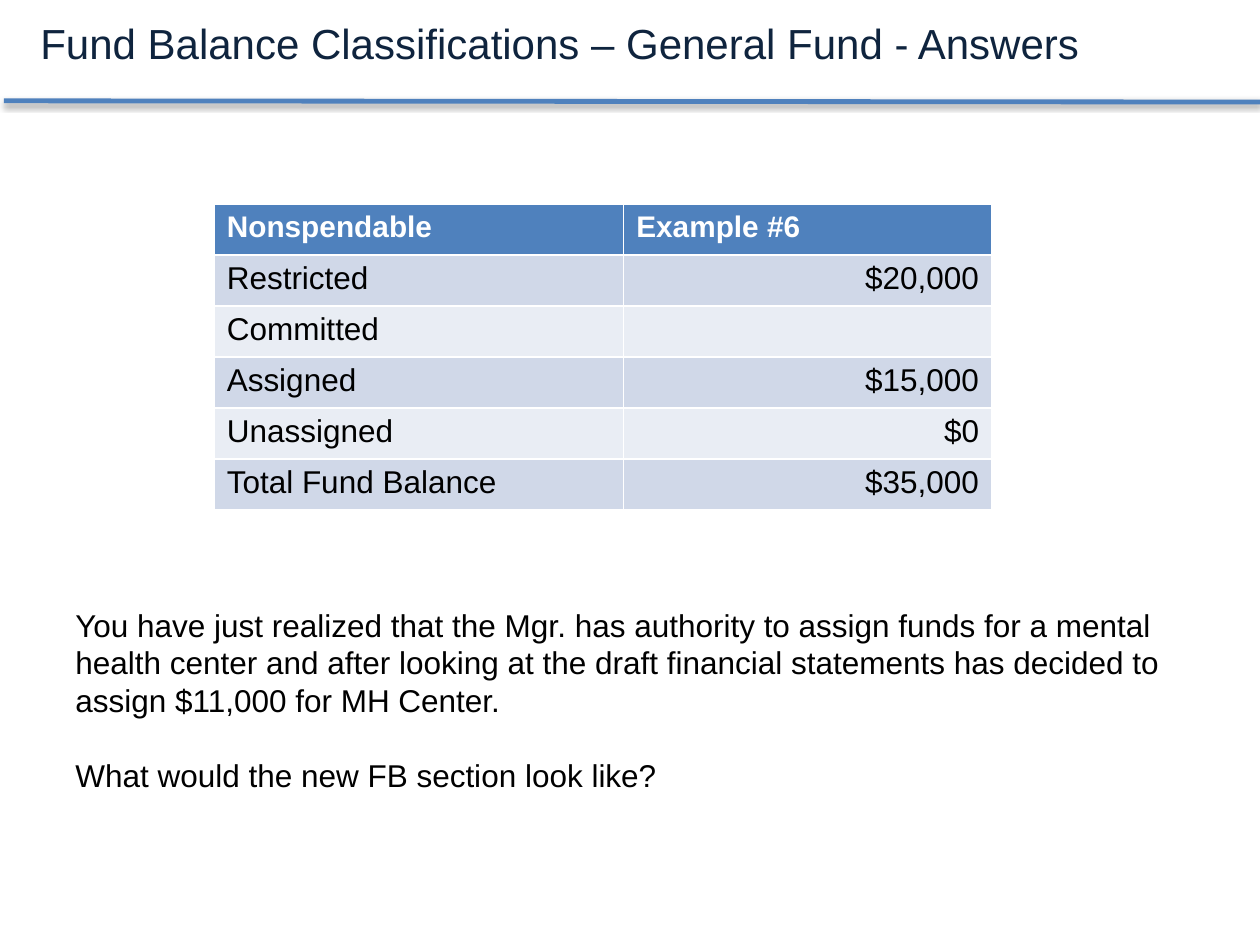
import pptx
import pptx.dml.color
import pptx.enum.text
import pptx.oxml
import pptx.util
from pptx.util import Inches

RGBColor = pptx.dml.color.RGBColor
Pt = pptx.util.Pt
PP_ALIGN = pptx.enum.text.PP_ALIGN
MSO_ANCHOR = pptx.enum.text.MSO_ANCHOR

NAVY = RGBColor(0x0F, 0x24, 0x3E)
BLUE = RGBColor(0x4F, 0x81, 0xBD)
BAND_DARK = RGBColor(0xD0, 0xD8, 0xE8)
BAND_LIGHT = RGBColor(0xE9, 0xED, 0xF4)
BLACK = RGBColor(0, 0, 0)
WHITE = RGBColor(0xFF, 0xFF, 0xFF)

RULE_SHADOW = (
    '<a:effectLst xmlns:a="http://schemas.openxmlformats.org/drawingml/2006/main">'
    '<a:outerShdw blurRad="39370" dist="20320" dir="5400000" rotWithShape="0">'
    '<a:srgbClr val="000000"><a:alpha val="38000"/></a:srgbClr>'
    '</a:outerShdw></a:effectLst>'
)


def write_text(paragraph, text, size=18, color=BLACK, bold=False, align=PP_ALIGN.LEFT):
    paragraph.text = text
    paragraph.alignment = align
    paragraph.font.name = "Arial"
    paragraph.font.size = Pt(size)
    paragraph.font.color.rgb = color
    paragraph.font.bold = bold


presentation = pptx.Presentation()
presentation.slide_width = Inches(10)
presentation.slide_height = Inches(7.5)
slide = presentation.slides.add_slide(presentation.slide_layouts[5])

# Title and the rule below it
title = slide.shapes.title
title.left, title.top = Inches(0.22), Inches(0.09)
title.width, title.height = Inches(8.53), Inches(0.5)
title.text_frame.word_wrap = False
title.text_frame.auto_size = pptx.enum.text.MSO_AUTO_SIZE.NONE
title.text_frame.vertical_anchor = MSO_ANCHOR.TOP
write_text(title.text_frame.paragraphs[0],
           "Fund Balance Classifications – General Fund - Answers",
           size=24, color=NAVY)

rule = slide.shapes.add_connector(pptx.enum.shapes.MSO_CONNECTOR.STRAIGHT,
                                  Inches(0.03), Inches(0.8), Inches(10), Inches(0.81))
rule.line.color.rgb = BLUE
rule.line.width = Pt(2.75)
rule._element.spPr.append(pptx.oxml.parse_xml(RULE_SHADOW))

# Fund balance table
rows = [
    ("Nonspendable", "Example #6"),
    ("Restricted", "$20,000"),
    ("Committed", ""),
    ("Assigned", "$15,000"),
    ("Unassigned", "$0"),
    ("Total Fund Balance", "$35,000"),
]
table = slide.shapes.add_table(len(rows), 2, Inches(1.7), Inches(1.62),
                               Inches(6.17), Inches(2.43)).table
table.columns[0].width = Inches(3.25)
table.columns[1].width = Inches(2.92)

for row_index, row in enumerate(rows):
    is_header = row_index == 0
    band = BAND_DARK if row_index % 2 else BAND_LIGHT
    for column_index, text in enumerate(row):
        cell = table.cell(row_index, column_index)
        cell.fill.solid()
        cell.fill.fore_color.rgb = BLUE if is_header else band
        is_amount = column_index == 1 and not is_header
        write_text(cell.text_frame.paragraphs[0], text,
                   size=17 if is_header else 18,
                   color=WHITE if is_header else BLACK,
                   bold=is_header,
                   align=PP_ALIGN.RIGHT if is_amount else PP_ALIGN.LEFT)

# Scenario and question
question_frame = slide.shapes.add_textbox(Inches(0.5), Inches(4.76),
                                          Inches(9), Inches(1.62)).text_frame
question_frame.word_wrap = True
scenario = question_frame.paragraphs[0]
write_text(scenario,
           "You have just realized that the Mgr. has authority to assign funds for a "
           "mental health center and after looking at the draft financial statements "
           "has decided to assign $11,000 for MH Center.")
question = question_frame.add_paragraph()
write_text(question, "What would the new FB section look like?")
question.space_before = Pt(21.5)
for paragraph in question_frame.paragraphs:
    paragraph.line_spacing = Pt(21.5)

presentation.save("out.pptx")
